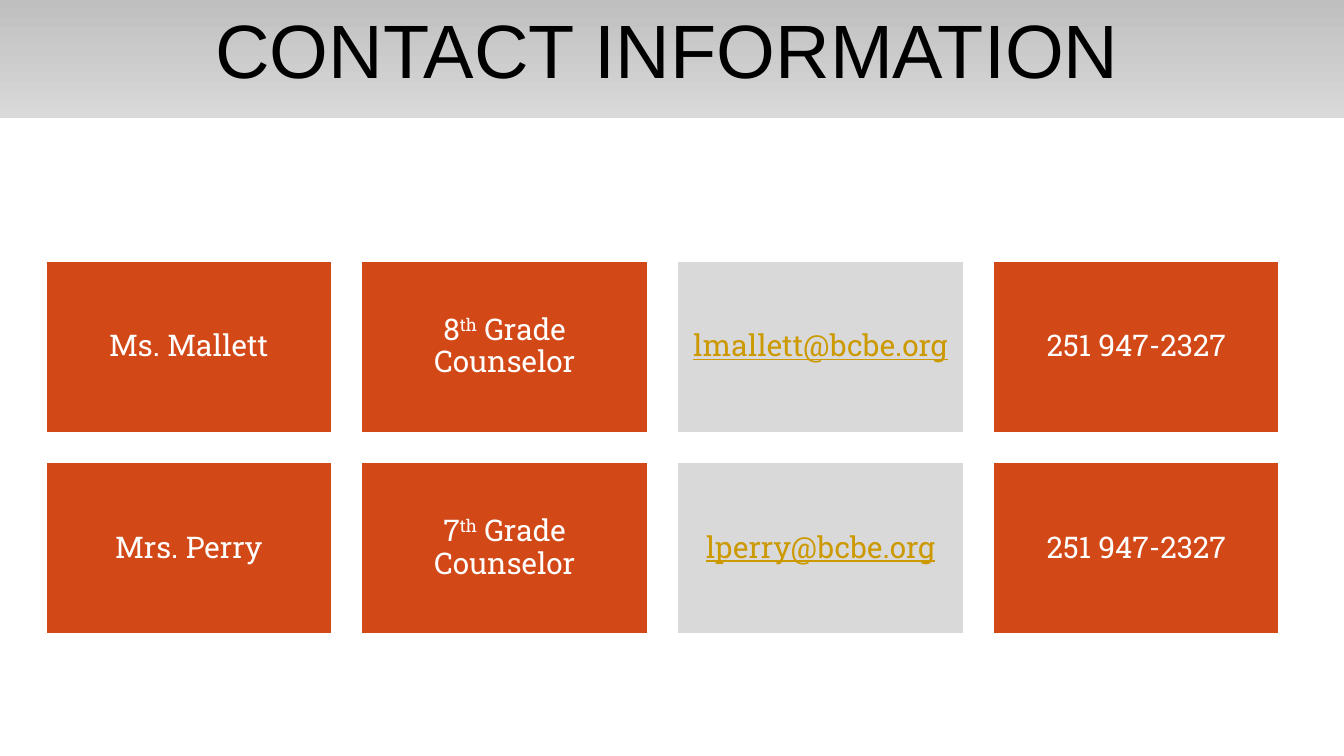
from dataclasses import dataclass

from pptx import Presentation
from pptx.dml.color import RGBColor
from pptx.enum.shapes import MSO_SHAPE
from pptx.enum.text import MSO_ANCHOR, MSO_AUTO_SIZE, PP_ALIGN
from pptx.util import Inches, Pt


@dataclass(frozen=True)
class Theme:
    band_top: str = "BFBFBF"
    band_bottom: str = "D9D9D9"
    tile: str = "D34817"
    email_tile: str = "D9D9D9"
    email: str = "CC9900"
    light: str = "FFFFFF"
    dark: str = "000000"
    title_font: str = "Arial"
    tile_font: str = "Roboto Slab"
    title_size: float = 40.5
    tile_size: float = 16


theme = Theme()


def add_text(paragraph, text, *, font, size, color, underline=False, superscript=False):
    run = paragraph.add_run()
    run.text = text
    run.font.name = font
    run.font.size = Pt(size)
    run.font.color.rgb = RGBColor.from_string(color)
    if underline:
        run.font.underline = True
    if superscript:
        run.font._element.set("baseline", "30000")


presentation = Presentation()
presentation.slide_width = Inches(10)
presentation.slide_height = Inches(10 * 9 / 16)
slide = presentation.slides.add_slide(presentation.slide_layouts[5])

# Title band
title = slide.shapes.title
title.left, title.top = Inches(0), Inches(0)
title.width, title.height = Inches(10), Inches(0.88)
title.fill.gradient()
title.fill.gradient_angle = 270
for stop, color in zip(title.fill.gradient_stops, (theme.band_top, theme.band_bottom)):
    stop.color.rgb = RGBColor.from_string(color)

frame = title.text_frame
frame.auto_size = MSO_AUTO_SIZE.NONE
frame.vertical_anchor = MSO_ANCHOR.TOP
frame.margin_left = Inches(1.6)
frame.margin_top = frame.margin_right = frame.margin_bottom = Inches(0.1)
paragraph = frame.paragraphs[0]
paragraph.alignment = PP_ALIGN.LEFT
paragraph.line_spacing = 0.9
add_text(paragraph, "CONTACT INFORMATION", font=theme.title_font,
         size=theme.title_size, color=theme.dark)

# Contact tiles: one row per counselor
contacts = [
    ("Ms. Mallett", "8", "lmallett@bcbe.org", "251 947-2327"),
    ("Mrs. Perry", "7", "lperry@bcbe.org", "251 947-2327"),
]
left, top = 0.34, 1.94
tile_width, tile_height = 2.13, 1.28
gap = 0.22

for row, (name, grade, email, phone) in enumerate(contacts):
    columns = [[name], [grade, "th", " Grade Counselor"], [email], [phone]]
    for column, pieces in enumerate(columns):
        is_email = pieces == [email]
        tile = slide.shapes.add_shape(
            MSO_SHAPE.RECTANGLE,
            Inches(left + column * (tile_width + gap)),
            Inches(top + row * (tile_height + gap)),
            Inches(tile_width), Inches(tile_height))
        tile.shadow.inherit = False
        tile.fill.solid()
        tile.fill.fore_color.rgb = RGBColor.from_string(
            theme.email_tile if is_email else theme.tile)
        tile.line.color.rgb = RGBColor.from_string(theme.light)
        tile.line.width = Pt(1)

        frame = tile.text_frame
        frame.word_wrap = True
        frame.vertical_anchor = MSO_ANCHOR.MIDDLE
        frame.margin_left = frame.margin_right = Inches(0.07)
        frame.margin_top = frame.margin_bottom = Inches(0.07)
        paragraph = frame.paragraphs[0]
        paragraph.alignment = PP_ALIGN.CENTER
        paragraph.line_spacing = 0.9
        for piece in pieces:
            add_text(paragraph, piece, font=theme.tile_font, size=theme.tile_size,
                     color=theme.email if is_email else theme.light,
                     underline=is_email, superscript=piece == "th")

presentation.save("out.pptx")
